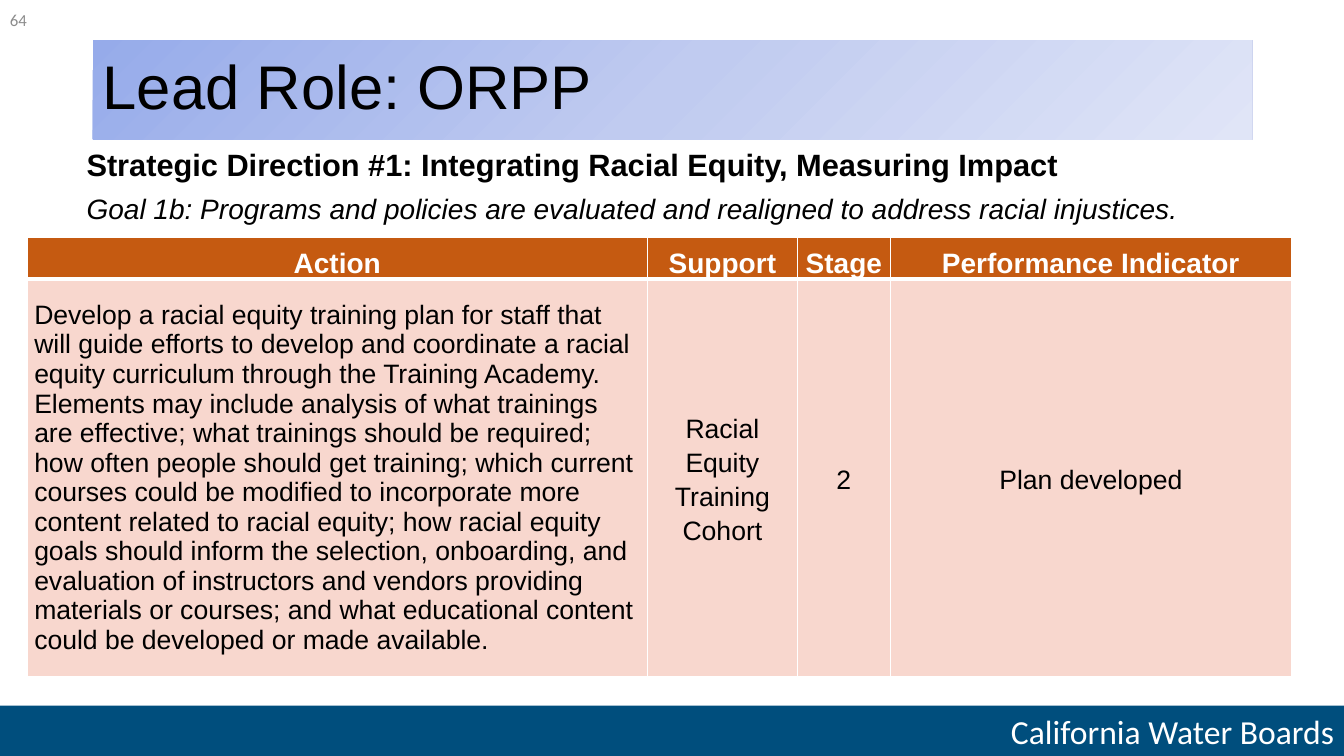
import copy
from lxml import etree
from pptx import Presentation
from pptx.dml.color import RGBColor
from pptx.enum import shapes, text
from pptx.oxml.ns import qn
from pptx.util import Inches, Pt

COLORS = {
    "footer": "004E7D", "white": "FFFFFF", "black": "000000", "number": "8C8C8C",
    "header": "C55A11", "body": "F8D7CE",
}
TITLE_GRADIENT = [(0, "96ABEA"), (0.5, "C0CBF0"), (1, "E0E5F7")]
FOOTER = "California Water Boards"
TITLE = "Lead Role: ORPP"
NUMBER = "64"
DIRECTION = "Strategic Direction #1: Integrating Racial Equity, Measuring Impact"
GOAL = "Goal 1b: Programs and policies are evaluated and realigned to address racial injustices."
HEADERS = ["Action", "Support", "Stage", "Performance Indicator"]
ACTION = (
    "Develop a racial equity training plan for staff that will guide efforts to develop and "
    "coordinate a racial equity curriculum through the Training Academy. Elements may include "
    "analysis of what trainings are effective; what trainings should be required; how often "
    "people should get training; which current courses could be modified to incorporate more "
    "content related to racial equity; how racial equity goals should inform the selection, "
    "onboarding, and evaluation of instructors and vendors providing materials or courses; and "
    "what educational content could be developed or made available."
)
ROWS = [HEADERS, [ACTION, "Racial Equity Training Cohort", "2", "Plan developed"]]
COL_WIDTHS = [6.15, 1.49, 0.92, 3.98]
ROW_HEIGHTS = [0.41, 3.93]
LEFT, CENTER, RIGHT = text.PP_ALIGN.LEFT, text.PP_ALIGN.CENTER, text.PP_ALIGN.RIGHT
MIDDLE, BOTTOM = text.MSO_ANCHOR.MIDDLE, text.MSO_ANCHOR.BOTTOM


def rgb(name):
    return RGBColor.from_string(COLORS[name])


def write(p, words, size, color, font="Arial", align=LEFT, bold=False, italic=False):
    p.add_run().text = words
    p.alignment = align
    f = p.font
    f.name, f.size, f.bold, f.italic = font, Pt(size), bold, italic
    f.color.rgb = rgb(color)


def add_bar(slide, *box):
    sp = slide.shapes.add_shape(shapes.MSO_SHAPE.RECTANGLE, *map(Inches, box))
    sp.shadow.inherit = False
    sp.line.fill.background()
    sp.text_frame.vertical_anchor = MIDDLE
    return sp


def add_text(slide, *box):
    tf = slide.shapes.add_textbox(*map(Inches, box)).text_frame
    tf.word_wrap = True
    return tf


def fill_gradient(fill, stops):
    fill.gradient()
    fill.gradient_angle = 315
    last = fill.gradient_stops[-1]._gs
    last.addprevious(copy.deepcopy(last))
    for stop, (position, color) in zip(fill.gradient_stops, stops):
        stop.position = position
        stop.color.rgb = RGBColor.from_string(color)


def add_borders(cell, widths):
    tc_pr = cell._tc.get_or_add_tcPr()
    for i, (side, width) in enumerate(zip("LRTB", widths)):
        ln = etree.Element(qn(f"a:ln{side}"), w=str(Pt(width)))
        solid = etree.SubElement(ln, qn("a:solidFill"))
        etree.SubElement(solid, qn("a:srgbClr"), val=COLORS["white"])
        tc_pr.insert(i, ln)


def add_actions(slide):
    frame = slide.shapes.add_table(len(ROWS), len(HEADERS), Inches(0.27), Inches(2.36),
                                   Inches(sum(COL_WIDTHS)), Inches(sum(ROW_HEIGHTS)))
    table = frame.table
    for col, width in zip(table.columns, COL_WIDTHS):
        col.width = Inches(width)
    for r, (row, height) in enumerate(zip(ROWS, ROW_HEIGHTS)):
        table.rows[r].height = Inches(height)
        head = r == 0
        for c, words in enumerate(row):
            cell = table.cell(r, c)
            cell.fill.solid()
            cell.fill.fore_color.rgb = rgb("header" if head else "body")
            cell.vertical_anchor = BOTTOM if head else MIDDLE
            side = 0.01 if head else 0.07
            cell.margin_left = cell.margin_right = Inches(side)
            cell.margin_top = Inches(side if c < 2 or head else 0)
            cell.margin_bottom = Inches(0 if head or c > 1 else side)
            p = cell.text_frame.paragraphs[0]
            write(p, words, 20 if head else 19, "white" if head else "black",
                  align=LEFT if words == ACTION else CENTER, bold=head)
            if not head and c:
                p.line_spacing = 1.15
            add_borders(cell, (1, 1, 1, 3) if head else (1, 1, 3, 1))


def main():
    prs = Presentation()
    prs.slide_width, prs.slide_height = Inches(13.33), Inches(7.5)
    slide = prs.slides.add_slide(prs.slide_layouts[6])

    footer = add_bar(slide, 0, 7, 13.33, 0.5)
    footer.fill.solid()
    footer.fill.fore_color.rgb = rgb("footer")
    write(footer.text_frame.paragraphs[0], FOOTER, 24, "white", "Calibri", RIGHT)

    title = add_bar(slide, 0.92, 0.4, 11.5, 0.98)
    fill_gradient(title.fill, TITLE_GRADIENT)
    p = title.text_frame.paragraphs[0]
    write(p, TITLE, 44, "black")
    p.line_spacing = 0.9

    tf = add_text(slide, 0, 0, 3, 0.4)
    tf.vertical_anchor = MIDDLE
    write(tf.paragraphs[0], NUMBER, 12, "number", "Calibri")

    tf = add_text(slide, 0.76, 1.4, 12.18, 0.89)
    write(tf.paragraphs[0], DIRECTION, 22, "black", bold=True)
    write(tf.add_paragraph(), GOAL, 20, "black", italic=True)
    for p in tf.paragraphs:
        p.space_after = Pt(6)

    add_actions(slide)
    prs.save("out.pptx")


if __name__ == "__main__":
    main()
